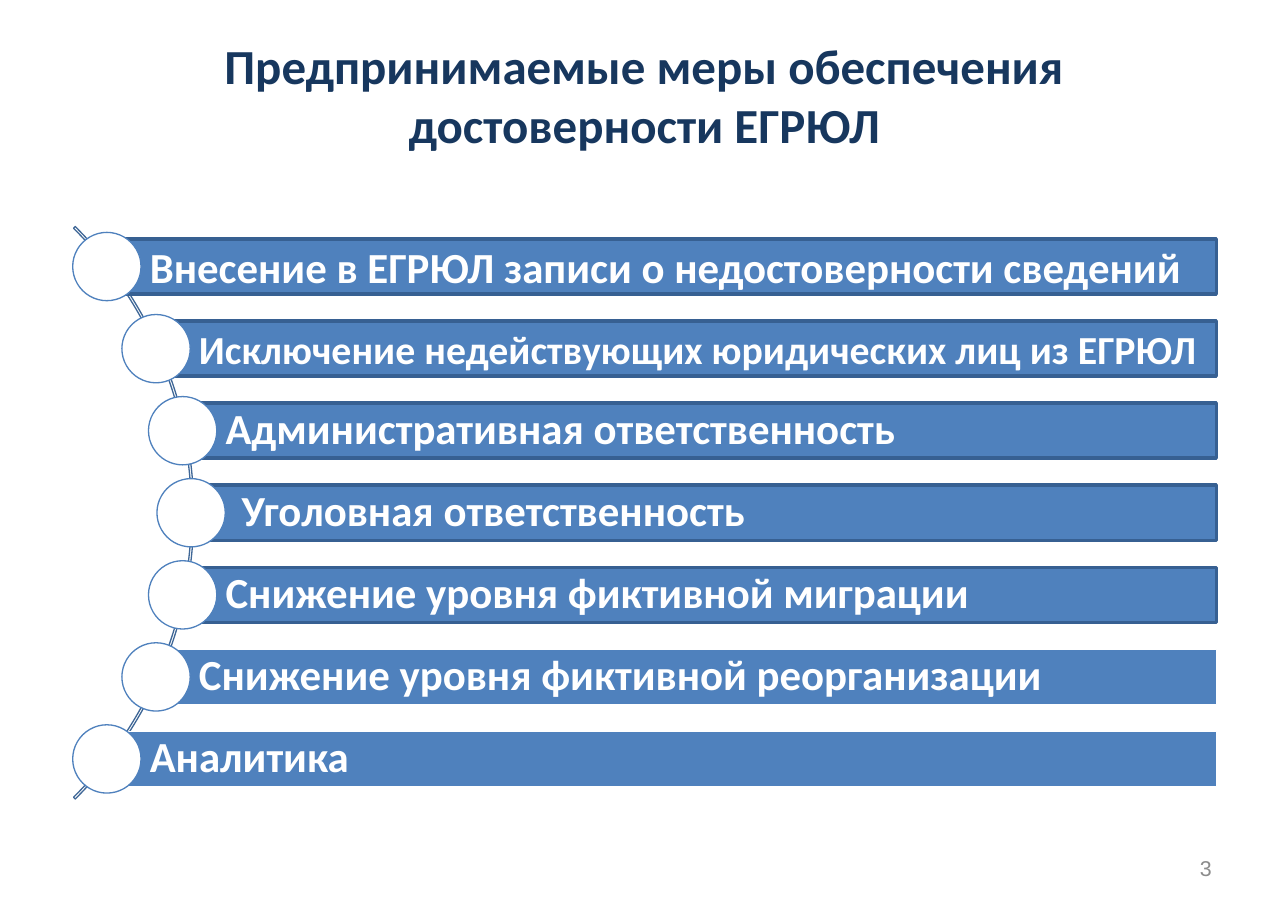
import math

import pptx
import pptx.dml.color
import pptx.enum.shapes
import pptx.enum.text
import pptx.util

Inches = pptx.util.Inches
Pt = pptx.util.Pt
Shape = pptx.enum.shapes.MSO_SHAPE
Align = pptx.enum.text.PP_ALIGN

BLUE = "4F81BD"
DARK_BLUE = "376092"
WHITE = "FFFFFF"
MEASURES = [
    ("Внесение в ЕГРЮЛ записи о недостоверности сведений", 28, 1.0, 0.39, DARK_BLUE, 2.25),
    ("Исключение недействующих юридических лиц из ЕГРЮЛ", 26, 1.0, 0.39, DARK_BLUE, 2.25),
    ("Административная ответственность", 28, 0.9, 0.39, DARK_BLUE, 2.25),
    ("Уголовная ответственность", 28, 0.9, 0.46, DARK_BLUE, 2.25),
    ("Снижение уровня фиктивной миграции", 28, 0.9, 0.39, DARK_BLUE, 2.25),
    ("Снижение уровня фиктивной реорганизации", 28, 0.9, 0.39, WHITE, 0.85),
    ("Аналитика", 28, 0.9, 0.39, WHITE, 0.85),
]


def color(value):
    """Return the colour for a hex string."""
    return pptx.dml.color.RGBColor.from_string(value)


def write(shape, text, size, font, fill, bold, align, insets, spacing=1.0):
    """Fill a shape with one middle-anchored paragraph."""
    frame = shape.text_frame
    frame.word_wrap = True
    frame.auto_size = pptx.enum.text.MSO_AUTO_SIZE.NONE
    frame.vertical_anchor = pptx.enum.text.MSO_ANCHOR.MIDDLE
    frame.margin_left, frame.margin_top, frame.margin_right, frame.margin_bottom = map(Inches, insets)
    paragraph = frame.paragraphs[0]
    paragraph.alignment = align
    paragraph.line_spacing = spacing
    run = paragraph.add_run()
    run.text = text
    run.font.size = Pt(size)
    run.font.name = font
    run.font.bold = bold
    run.font.color.rgb = color(fill)


def add_figure(shapes, kind, box, fill, line, width):
    """Add a preset shape with the given fill and outline."""
    shape = shapes.add_shape(kind, *map(Inches, box))
    shape.shadow.inherit = False
    if fill:
        shape.fill.solid()
        shape.fill.fore_color.rgb = color(fill)
    else:
        shape.fill.background()
    shape.line.color.rgb = color(line)
    shape.line.width = Pt(width)
    return shape


def add_title(slide, left, top, width, height):
    """Place the slide title in its placeholder."""
    title = slide.shapes.title
    title.left, title.top, title.width, title.height = map(Inches, (left, top, width, height))
    write(title, "Предпринимаемые меры обеспечения достоверности ЕГРЮЛ", 32, "Calibri",
          "17375E", True, Align.CENTER, (0.11, 0.06, 0.11, 0.06))


def add_measures(slide, left, top, width, height):
    """Draw the bars whose circles sit along an arc bulging to the right."""
    shapes = slide.shapes.add_group_shape().shapes
    diameter, bar_height, arc_size, radius = 0.62, 0.5, 7.35, 3.65
    pitch = (height - diameter) / (len(MEASURES) - 1)
    middle = top + height / 2
    reach = (height - diameter) / 2
    arc_x = left + diameter / 2 - math.sqrt(radius ** 2 - reach ** 2)
    arc = add_figure(shapes, Shape.BLOCK_ARC,
                     (arc_x - arc_size / 2, middle - arc_size / 2, arc_size, arc_size),
                     None, "3F6797", 0.85)
    for index, value in enumerate((189, 27, 0.003)):
        arc.adjustments[index] = value
    for index, (text, size, spacing, inset, line, line_width) in enumerate(MEASURES):
        offset = index * pitch - reach
        x = arc_x + math.sqrt(radius ** 2 - offset ** 2)
        y = middle + offset
        bar = add_figure(shapes, Shape.RECTANGLE,
                         (x, y - bar_height / 2, left + width - x, bar_height),
                         BLUE, line, line_width)
        write(bar, text, size, "Calibri", WHITE, True, Align.LEFT,
              (inset, 0.07, 0.07, 0.07), spacing)
        add_figure(shapes, Shape.OVAL,
                   (x - diameter / 2, y - diameter / 2, diameter, diameter),
                   WHITE, BLUE, 0.85)


def add_page_number(slide, left, top, width, height):
    """Place the page number at the right of its box."""
    box = slide.shapes.add_textbox(*map(Inches, (left, top, width, height)))
    write(box, "3", 14, "Arial", "8C8C8C", False, Align.RIGHT, (0.11, 0.06, 0.11, 0.06))


def main():
    """Build and save the presentation."""
    presentation = pptx.Presentation()
    presentation.slide_width = Inches(11.69)
    presentation.slide_height = Inches(8.27)
    slide = presentation.slides.add_slide(presentation.slide_layouts[5])
    add_title(slide, 0.59, 0.33, 10.52, 1.05)
    add_measures(slide, 0.66, 2.11, 10.38, 5.09)
    add_page_number(slide, 8.38, 7.66, 2.73, 0.44)
    presentation.save("out.pptx")


if __name__ == "__main__":
    main()
